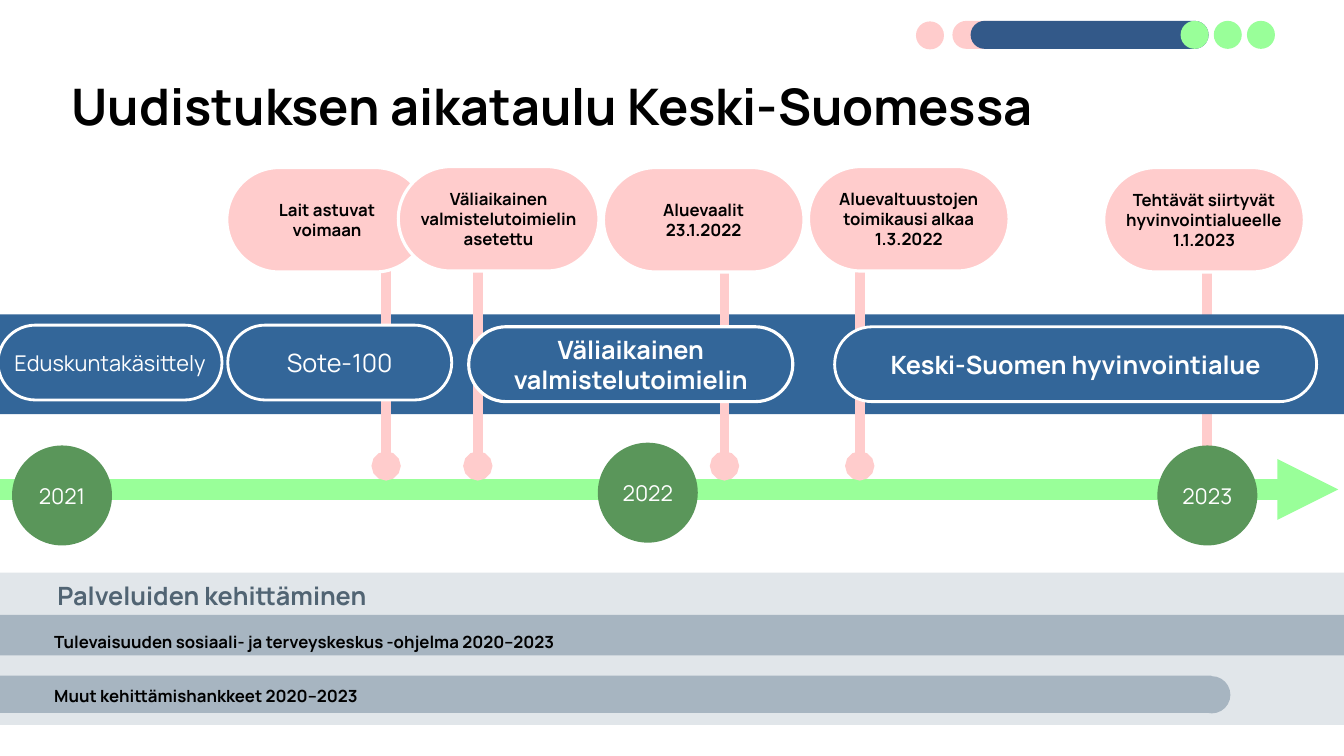
from pptx import Presentation
from pptx.dml.color import RGBColor
from pptx.enum import shapes, text
from pptx.oxml import parse_xml
from pptx.oxml.ns import nsdecls
from pptx.util import Pt

COLOURS = {
    "pink": "FFCCCC", "navy": "335989", "blue": "336699", "lime": "99FF99",
    "green": "5A965A", "panel": "E1E6EA", "bar": "A7B5C1", "slate": "516473",
    "black": "000000", "white": "FFFFFF",
}
FONT = "Manrope"
RECT = shapes.MSO_SHAPE.RECTANGLE
PILL = shapes.MSO_SHAPE.ROUNDED_RECTANGLE
OVAL = shapes.MSO_SHAPE.OVAL
LEFT, CENTER = text.PP_ALIGN.LEFT, text.PP_ALIGN.CENTER
MIDDLE, BOTTOM = text.MSO_ANCHOR.MIDDLE, text.MSO_ANCHOR.BOTTOM


def rgb(name):
    return RGBColor.from_string(COLOURS[name])


def write(sp, words, size, colour, bold=False, align=CENTER, anchor=MIDDLE, inset=0):
    tf = sp.text_frame
    tf.word_wrap = True
    tf.vertical_anchor = anchor
    tf.margin_left = tf.margin_right = Pt(inset)
    tf.margin_top = tf.margin_bottom = Pt(3.6)
    tf.text = words
    for p in tf.paragraphs:
        p.alignment = align
        for r in p.runs:
            r.font.name, r.font.size, r.font.bold = FONT, Pt(size), bold
            r.font.color.rgb = rgb(colour)
    return tf


def add_label(s, x, y, w, h, words, size, colour="black", anchor=MIDDLE):
    sp = s.shapes.add_textbox(Pt(x), Pt(y), Pt(w), Pt(h))
    return write(sp, words, size, colour, True, LEFT, anchor, 7.2)


def add_block(s, kind, x, y, w, h, fill, outline=0):
    """Add a filled shape, with a white outline if a width is given."""
    sp = s.shapes.add_shape(kind, Pt(x), Pt(y), Pt(w), Pt(h))
    sp.shadow.inherit = False
    sp.fill.solid()
    sp.fill.fore_color.rgb = rgb(fill)
    if outline:
        sp.line.color.rgb = rgb("white")
        sp.line.width = Pt(outline)
    else:
        sp.line.fill.background()
    if kind == PILL:
        sp.adjustments[0] = 0.5
    return sp


def add_line(s, x1, y1, x2, y2, colour, width, end):
    sp = s.shapes.add_connector(shapes.MSO_CONNECTOR.STRAIGHT, Pt(x1), Pt(y1), Pt(x2), Pt(y2))
    sp.line.color.rgb = rgb(colour)
    sp.line.width = Pt(width)
    sp.line._get_or_add_ln().append(parse_xml(f'<a:tailEnd {nsdecls("a")} type="{end}"/>'))
    sp._element.spPr.append(parse_xml(f'<a:effectLst {nsdecls("a")}/>'))


def add_ornament(s, x, y, d):
    """Draw the row of dots and bars, d points high."""
    add_block(s, PILL, x + 26, y, 43, d, "pink")
    add_block(s, PILL, x + 39, y, 170, d, "navy")
    for i in range(3):
        add_block(s, OVAL, x + 189 + 23.7 * i, y, d, d, "lime")
    add_block(s, OVAL, x, y + 0.4, d, d, "pink")


def add_title(s, x, y, w, h):
    tf = add_label(s, x, y, w, h, "Uudistuksen aikataulu Keski-Suomessa", 36, anchor=BOTTOM)
    tf.paragraphs[0].line_spacing = 0.9


def add_timeline(s, x, y, w):
    """Draw milestones, phase band and year axis downwards from y."""
    bubble_w, bubble_h, pill_h, year_d = 143.3, 74.6, 53.5, 71.4
    milestones = [  # bubble left, bubble drop, stem position, text
        (162, 0.7, 275.8, "Lait astuvat\vvoimaan"),
        (284.5, 0, 341.3, "Väliaikainen valmistelutoimielin\nasetettu"),
        (431, 0.7, 517.5, "Aluevaalit\n23.1.2022"),
        (577.5, 0, 614.1, "Aluevaltuustojen toimikausi alkaa\n1.3.2022"),
        (788.4, 0.7, 862.4, "Tehtävät siirtyvät hyvinvointialueelle\n1.1.2023"),
    ]
    phases = [  # left, drop, width, text, size, bold, outline
        (334.8, 114.4, 231.5, "Väliaikainen valmistelutoimielin", 18, True, 2.25),
        (162.7, 113.2, 160, "Sote-100", 18, False, 2),
        (-1.4, 113.2, 160, "Eduskuntakäsittely", 15.5, False, 2),
        (596.2, 114.4, 344.3, "Keski-Suomen hyvinvointialue", 18, True, 2),
    ]
    years = [("2021", 8.6, 199.2), ("2022", 427, 197.2), ("2023", 826.7, 199.2)]

    def add_stem(left):
        add_line(s, x + left, y + 42, x + left, y + 213.8, "pink", 7, "oval")

    *early, last = [stem for _, _, stem, _ in milestones]
    add_stem(last)
    add_block(s, RECT, x, y + 105.5, w, 71.3, "blue")
    add_line(s, x, y + 230.6, x + w - 4, y + 230.6, "lime", 14.5, "triangle")
    for year, left, drop in years:
        sp = add_block(s, OVAL, x + left, y + drop, year_d, year_d, "green")
        write(sp, year, 15.5, "white")
    for stem in early:
        add_stem(stem)
    for left, drop, _, words in milestones:
        sp = add_block(s, PILL, x + left, y + drop, bubble_w, bubble_h, "pink", 2.25)
        write(sp, words, 12, "black", True)
    for left, drop, width, words, size, bold, outline in phases:
        sp = add_block(s, PILL, x + left, y + drop, width, pill_h, "blue", outline)
        write(sp, words, size, "white", bold)


def add_development(s, x, y, w, h):
    """Draw the panel of development programmes."""
    end_d = 26.6
    add_block(s, RECT, x, y, w, h, "panel")
    add_block(s, RECT, x, y + 30.2, w, 29, "bar")
    add_block(s, RECT, x, y + 73.6, 865.4, end_d, "bar")
    add_block(s, OVAL, x + 852.3, y + 74, end_d, end_d, "bar")
    add_label(s, x + 34, y + 2, 330, 29, "Palveluiden kehittäminen", 18, "slate")
    add_label(s, x + 31.7, y + 38.8, 440, 21.8,
              "Tulevaisuuden sosiaali- ja terveyskeskus -ohjelma 2020–2023", 12)
    add_label(s, x + 31.7, y + 77.2, 440, 21.8, "Muut kehittämishankkeet 2020–2023", 12)


def main():
    prs = Presentation()
    prs.slide_width, prs.slide_height = Pt(960), Pt(540)
    s = prs.slides.add_slide(prs.slide_layouts[6])
    add_ornament(s, 654.3, 14.9, 20)
    add_timeline(s, 0, 119, 960)
    add_title(s, 44, 44.6, 867, 56.2)
    add_development(s, 0, 409, 960, 108.7)
    prs.save("out.pptx")


if __name__ == "__main__":
    main()
